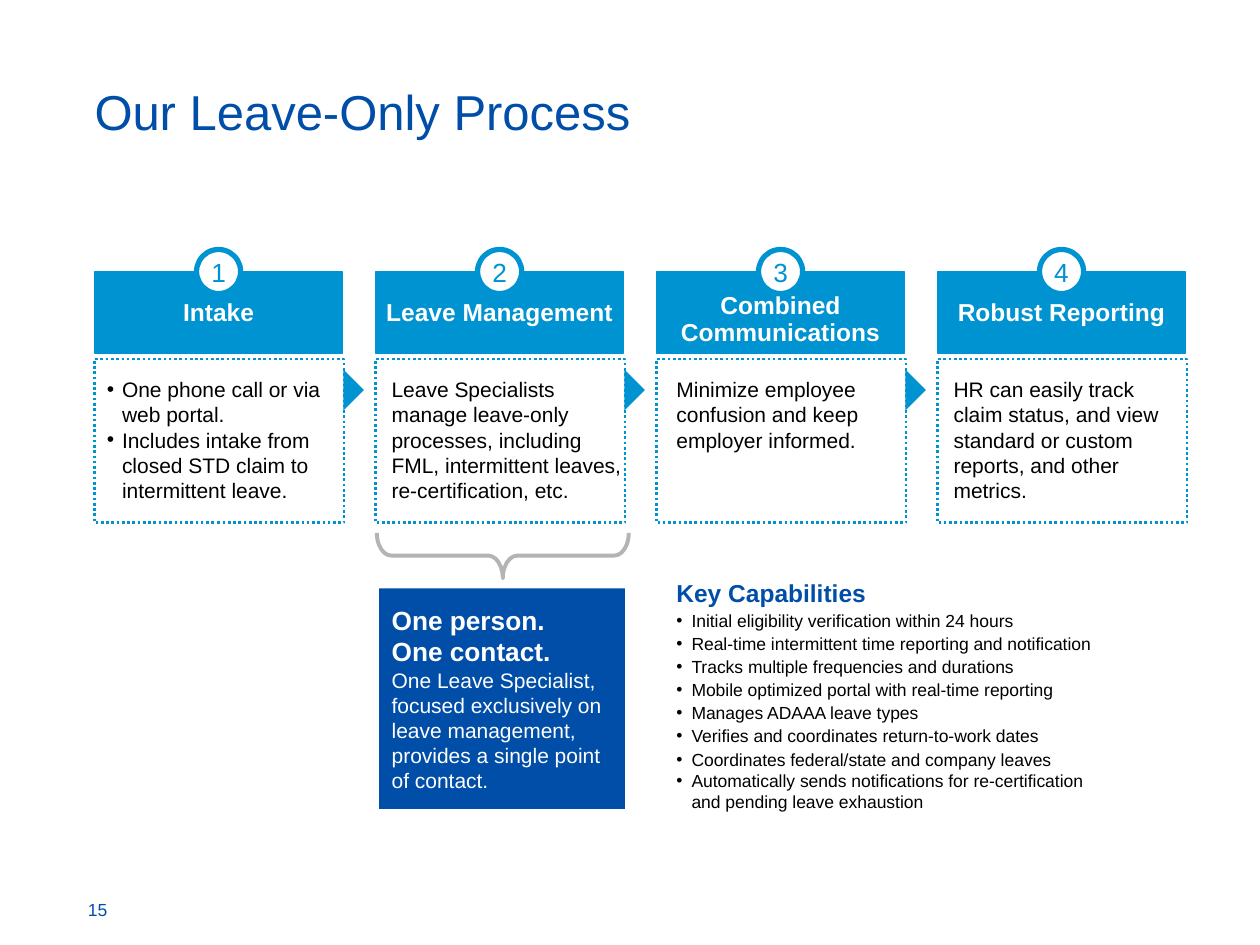
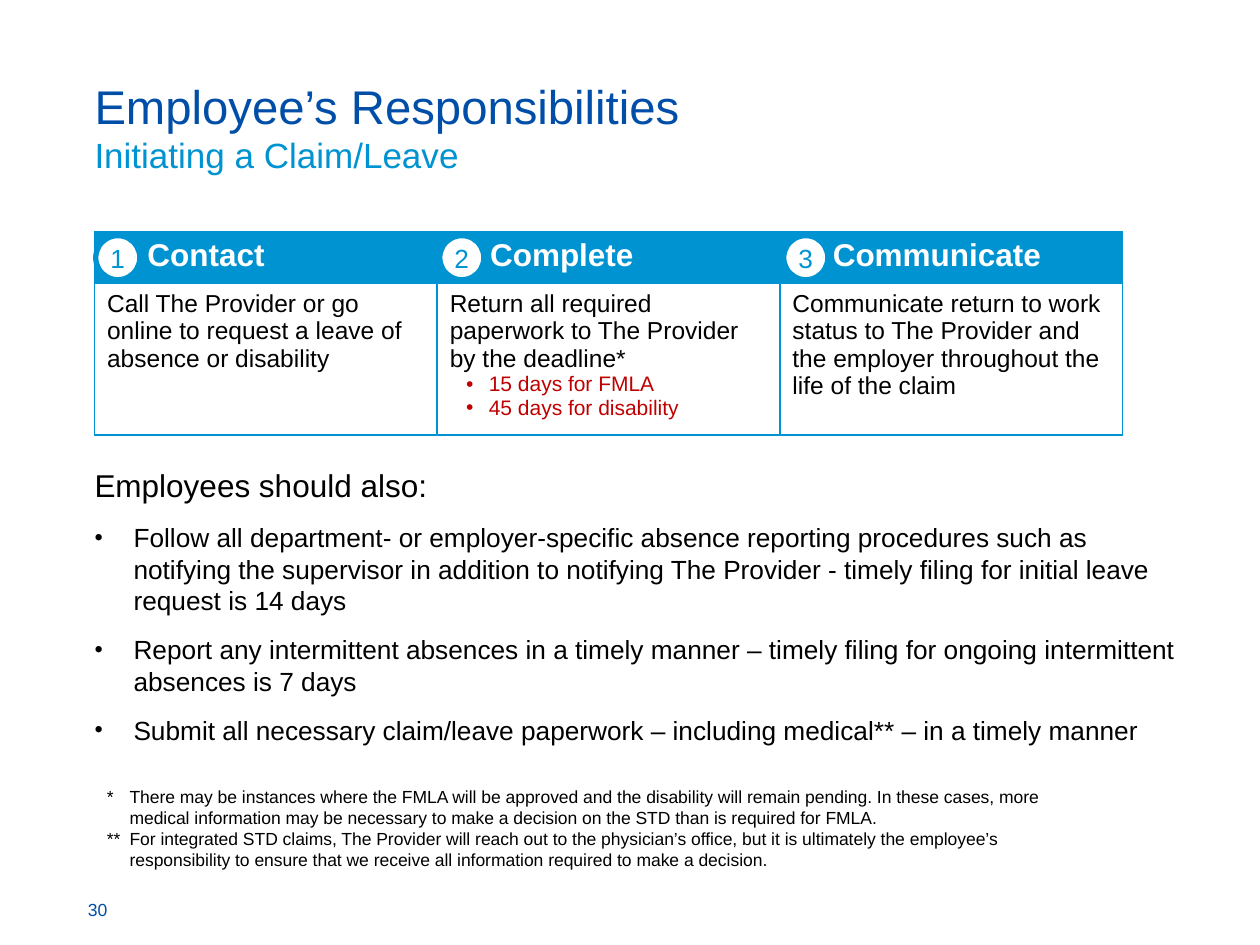
from dataclasses import dataclass

from lxml.etree import SubElement
from pptx import Presentation
from pptx.dml.color import RGBColor
from pptx.enum.dml import MSO_LINE_DASH_STYLE as Dash
from pptx.enum.shapes import MSO_SHAPE as Preset
from pptx.enum.text import MSO_ANCHOR as Anchor, PP_ALIGN as Align
from pptx.oxml import parse_xml
from pptx.oxml.ns import nsdecls, qn
from pptx.util import Pt

EMU_PER_PX = 9144  # 100 px to the inch


def px(length):
    return int(length * EMU_PER_PX)


def color(hex_string):
    return RGBColor.from_string(hex_string)


@dataclass
class Para:
    """One paragraph; indents are in px, sizes and gaps in points."""
    text: str
    size: float = 12
    ink: str = "000000"
    bold: bool = False
    align: Align = Align.LEFT
    margin: int = 0
    indent: int = 0
    bullet: bool = False
    bullet_pct: int = 100
    line: float = 1.0
    before: int = 0
    after: int = 0


class Deck:
    FONT = "Arial"
    NAVY, SKY, GRAY = "004EA8", "0093D1", "B5B4B3"
    WHITE, RED = "FFFFFF", "C00000"

    def __init__(self, width, height):
        self.prs = Presentation()
        self.prs.slide_width, self.prs.slide_height = px(width), px(height)
        self.slide = None

    # --- Slide frame ---
    def new_slide(self, number, title_top, *title):
        self.slide = self.prs.slides.add_slide(self.prs.slide_layouts[6])
        self.text((75, title_top, 875, 67), title, insets=(0, 3, 0, 3))
        self.text((60, 697, 50, 38), [Para(str(number), 10, self.NAVY)],
                  anchor=Anchor.BOTTOM)

    # --- Text ---
    def fill_frame(self, frame, paras):
        frame.text = "\n".join(para.text for para in paras)
        for paragraph, para in zip(frame.paragraphs, paras):
            paragraph.alignment = para.align
            paragraph.line_spacing = para.line
            paragraph.space_before = Pt(para.before)
            paragraph.space_after = Pt(para.after)
            props = paragraph._p.get_or_add_pPr()
            props.set("marL", str(px(para.margin)))
            props.set("indent", str(px(para.indent)))
            if para.bullet:
                SubElement(props, qn("a:buSzPct")).set("val", str(para.bullet_pct * 1000))
                SubElement(props, qn("a:buFont")).set("typeface", self.FONT)
                SubElement(props, qn("a:buChar")).set("char", "•")
            for run in paragraph.runs:
                run.font.name = self.FONT
                run.font.size = Pt(para.size)
                run.font.bold = para.bold
                run.font.color.rgb = color(para.ink)

    def set_text(self, shape, paras, anchor, insets):
        frame = shape.text_frame
        frame.word_wrap = True
        frame.vertical_anchor = anchor
        (frame.margin_left, frame.margin_top,
         frame.margin_right, frame.margin_bottom) = map(px, insets)
        self.fill_frame(frame, paras)

    def text(self, box, paras, anchor=Anchor.TOP, insets=(10, 5, 10, 5)):
        area = self.slide.shapes.add_textbox(*map(px, box))
        self.set_text(area, paras, anchor, insets)

    # --- Shapes ---
    def shape(self, preset, box, fill=None, line=None, weight=1, dash=None,
              rotation=0, paras=(), anchor=Anchor.TOP, insets=(0, 0, 0, 0)):
        item = self.slide.shapes.add_shape(preset, *map(px, box))
        item.shadow.inherit = False
        item.rotation = rotation
        if fill:
            item.fill.solid()
            item.fill.fore_color.rgb = color(fill)
        else:
            item.fill.background()
        if line:
            item.line.color.rgb = color(line)
            item.line.width = Pt(weight)
            if dash:
                item.line.dash_style = dash
        else:
            item.line.fill.background()
        if paras:
            self.set_text(item, paras, anchor, insets)
        return item

    def badge(self, left, top, number):
        self.shape(Preset.OVAL, (left, top, 35, 35), self.WHITE, self.SKY, 3,
                   paras=[Para(str(number), 15, self.SKY, align=Align.CENTER)],
                   anchor=Anchor.MIDDLE)

    # --- Table ---
    def table(self, box, row_heights, rows, fills):
        grid = self.slide.shapes.add_table(len(rows), len(rows[0]), *map(px, box)).table
        grid.first_row = grid.horz_banding = False
        for row, height in zip(grid.rows, row_heights):
            row.height = px(height)
        for r, row in enumerate(rows):
            for c, paras in enumerate(row):
                cell = grid.cell(r, c)
                self.fill_frame(cell.text_frame, paras)
                if fills[r]:
                    cell.fill.solid()
                    cell.fill.fore_color.rgb = color(fills[r])
                else:
                    cell.fill.background()
                self.cell_borders(cell)

    def cell_borders(self, cell):
        props = cell._tc.get_or_add_tcPr()
        for position, side in enumerate("LRTB"):
            props.insert(position, parse_xml(
                f'<a:ln{side} {nsdecls("a")} w="{Pt(1)}"><a:solidFill>'
                f'<a:srgbClr val="{self.SKY}"/></a:solidFill></a:ln{side}>'))


def process_slide(deck):
    deck.new_slide(15, 62, Para("Our Leave-Only Process", 28, deck.NAVY))

    # Four steps: heading, heading inset and line spacing, text shift and width, text
    steps = [
        ("Intake", 20, 1, 0, 192,
         ["One phone call or via web portal.",
          "Includes intake from closed STD claim to intermittent leave."]),
        ("Leave Management", 20, 1, 3, 206,
         ["Leave Specialists manage leave-only processes, including FML, "
          "intermittent leaves, re-certification, etc."]),
        ("Combined Communications", 17, 0.9, 6, 179,
         ["Minimize employee confusion and keep employer informed."]),
        ("Robust Reporting", 20, 1, 3, 210,
         ["HR can easily track\vclaim status, and view standard or custom "
          "reports, and other\vmetrics."]),
    ]
    first_left, pitch = 75, 223
    for i, (heading, inset, line, shift, width, details) in enumerate(steps):
        left = first_left + i * pitch
        deck.shape(Preset.RECTANGLE, (left, 285, 198, 130), deck.WHITE, deck.SKY,
                   1.5, Dash.ROUND_DOT)
        deck.shape(Preset.RECTANGLE, (left, 216, 197, 64), deck.SKY, deck.SKY,
                   paras=[Para(heading, 14, deck.WHITE, True, Align.CENTER, line=line)],
                   insets=(0, inset, 0, 0))
        deck.badge(left + 81, 198, i + 1)
        listed = len(details) > 1
        hang = 12 if listed else 0
        deck.text((left + shift, 294, width, 111),
                  [Para(detail, margin=hang, indent=-hang, bullet=listed)
                   for detail in details])

    # Arrows between the steps
    for i in range(len(steps) - 1):
        deck.shape(Preset.RIGHT_TRIANGLE, (261 + i * pitch, 298, 23, 23), deck.SKY,
                   rotation=225)

    # Single contact under step 2
    brace = deck.shape(Preset.RIGHT_BRACE, (381, 341, 36, 200), line=deck.GRAY,
                       weight=2.25, rotation=90)
    brace.adjustments[0] = 0.32
    deck.shape(Preset.RECTANGLE, (301, 467, 195, 175), deck.NAVY,
               paras=[Para("One person.\vOne contact.", 15, deck.WHITE, True),
                      Para("One Leave Specialist, focused exclusively on leave "
                           "management, provides a single point of contact.",
                           ink=deck.WHITE)],
               anchor=Anchor.MIDDLE, insets=(10, 0, 10, 0))

    # Key capabilities
    capabilities = [
        "Initial eligibility verification within 24 hours",
        "Real-time intermittent time reporting and notification",
        "Tracks multiple frequencies and durations",
        "Mobile optimized portal with real-time reporting",
        "Manages ADAAA leave types",
        "Verifies and coordinates return-to-work dates",
        "Coordinates federal/state and company leaves",
        "Automatically sends notifications for re-certification\v"
        "and pending leave exhaustion",
    ]
    deck.text((527, 459, 386, 217),
              [Para("Key Capabilities", 14, deck.NAVY, True)]
              + [Para(capability, 10, margin=12, indent=-12, bullet=True,
                      line=1 if "\v" in capability else 1.1)
                 for capability in capabilities],
              insets=(10, 0, 10, 0))


def responsibilities_slide(deck):
    deck.new_slide(30, 58, Para("Employee’s Responsibilities", 27, deck.NAVY),
                   Para("Initiating a Claim/Leave", 20, deck.SKY))

    # Three duties
    duties = [
        ("Contact", "Call The Provider or go online to request a leave of "
                    "absence or disability", []),
        ("Complete", "Return all required paperwork to The Provider by the deadline*",
         ["15 days for FMLA", "45 days for disability"]),
        ("Communicate", "Communicate return to work status to The Provider and the "
                        "employer throughout the life of the claim", []),
    ]
    headings = [[Para(heading, 18, deck.WHITE, True, indent=32)]
                for heading, _, _ in duties]
    bodies = [[Para(duty, 14)] + [Para(deadline, 12, deck.RED, margin=31, indent=-18,
                                       bullet=True) for deadline in deadlines]
              for _, duty, deadlines in duties]
    deck.table((75, 184, 816, 161), (41, 120), [headings, bodies], (deck.SKY, None))
    for i in range(len(duties)):
        deck.badge(76 + i * 273, 187, i + 1)

    # Further duties
    further = [
        "Follow all department- or employer-specific absence reporting procedures "
        "such as notifying the supervisor in addition to notifying The Provider - "
        "timely filing for initial leave request is 14 days",
        "Report any intermittent absences in a timely manner – timely filing for "
        "ongoing intermittent absences is 7 days",
        "Submit all necessary claim/leave paperwork – including medical** – in a "
        "timely manner",
    ]
    deck.text((75, 367, 858, 253),
              [Para("Employees should also:", 18, after=6)]
              + [Para(duty, 15, margin=31, indent=-31, bullet=True, bullet_pct=90,
                      before=4, after=6) for duty in further],
              insets=(0, 3, 0, 3))

    # Footnotes
    footnotes = [
        "*\tThere may be instances where the FMLA will be approved and the disability "
        "will remain pending. In these cases, more medical information may be necessary "
        "to make a decision on the STD than is required for FMLA.",
        "**\tFor integrated STD claims, The Provider will reach out to the physician’s "
        "office, but it is ultimately the employee’s responsibility to ensure that we "
        "receive all information required to make a decision.",
    ]
    deck.text((75, 619, 766, 77),
              [Para(note, 10, margin=18, indent=-18) for note in footnotes])


def main():
    deck = Deck(1000, 750)
    process_slide(deck)
    responsibilities_slide(deck)
    deck.prs.save("out.pptx")


if __name__ == "__main__":
    main()
